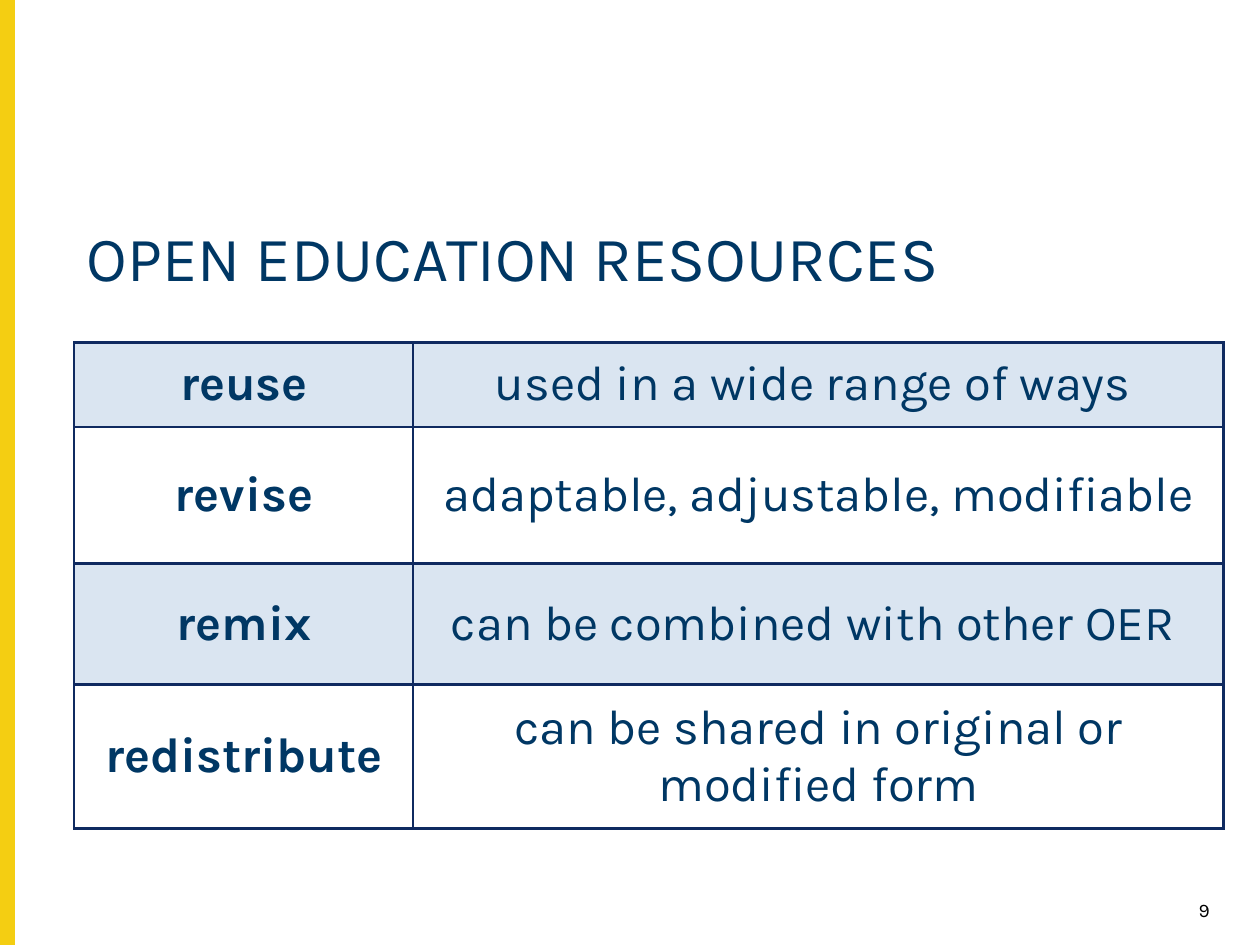
from lxml import etree
from pptx import Presentation
from pptx.dml.color import RGBColor
from pptx.enum import shapes, text
from pptx.oxml.ns import qn
from pptx.util import Pt

TITLE = "OPEN EDUCATION RESOURCES"
PAGE = "9"
ROWS = [  # term, meaning, row height
    ("reuse", "used in a wide range of ways ", 47.4),
    ("revise", "adaptable, adjustable, modifiable", 78.2),
    ("remix", "can be combined with other OER ", 69.2),
    ("redistribute", "can be shared in original or modified form", 82.2),
]
COL_WIDTHS = [193.7, 463]
LEFT, TABLE_TOP = 42.5, 195.8
FONT = "Karla"
COLORS = {"bar": "F4CE12", "text": "003764", "border": "0F2A60",
          "band": "DAE5F1", "page": "000000"}


def rgb(name):
    return RGBColor.from_string(COLORS[name])


def write(tf, content, size, color="text", align=text.PP_ALIGN.LEFT, bold=False):
    tf.text = content
    tf.word_wrap = True
    p = tf.paragraphs[0]
    p.alignment = align
    font = p.runs[0].font
    font.name, font.size, font.bold = FONT, Pt(size), bold
    font.color.rgb = rgb(color)


def add_text(s, box, inset, *args, **kwargs):
    tf = s.shapes.add_textbox(*map(Pt, box)).text_frame
    tf.margin_left = tf.margin_right = Pt(7.2)
    tf.margin_top = tf.margin_bottom = Pt(inset)
    tf.vertical_anchor = text.MSO_ANCHOR.MIDDLE
    write(tf, *args, **kwargs)


def add_borders(cell, width):
    tc_pr = cell._tc.get_or_add_tcPr()
    for i, side in enumerate(("lnL", "lnR", "lnT", "lnB")):
        ln = etree.Element(qn("a:" + side), w=str(Pt(width)))
        fill = etree.SubElement(ln, qn("a:solidFill"))
        etree.SubElement(fill, qn("a:srgbClr"), val=COLORS["border"])
        tc_pr.insert(i, ln)


prs = Presentation()
prs.slide_width, prs.slide_height = Pt(720), Pt(540)
s = prs.slides.add_slide(prs.slide_layouts[6])

# Yellow side bar
bar = s.shapes.add_shape(shapes.MSO_SHAPE.RECTANGLE, 0, 0, Pt(8), prs.slide_height)
bar.shadow.inherit = False
bar.fill.solid()
bar.fill.fore_color.rgb = bar.line.color.rgb = rgb("bar")
bar.line.width = Pt(1)

# Title
add_text(s, (LEFT, 115.2, sum(COL_WIDTHS), 62.6), 7.2, TITLE, 36)

# Table of terms, with every other row tinted
heights = [row[2] for row in ROWS]
table = s.shapes.add_table(len(ROWS), 2, Pt(LEFT), Pt(TABLE_TOP),
                           Pt(sum(COL_WIDTHS)), Pt(sum(heights))).table
table.first_row = table.horz_banding = False
for col, width in zip(table.columns, COL_WIDTHS):
    col.width = Pt(width)
for r, (term, meaning, height) in enumerate(ROWS):
    table.rows[r].height = Pt(height)
    for c, content in enumerate((term, meaning)):
        cell = table.cell(r, c)
        cell.margin_left = cell.margin_right = Pt(7.2)
        cell.margin_top = cell.margin_bottom = Pt(7.2)
        cell.vertical_anchor = text.MSO_ANCHOR.MIDDLE
        write(cell.text_frame, content, 28, align=text.PP_ALIGN.CENTER, bold=c == 0)
        if r % 2 == 0:
            cell.fill.solid()
            cell.fill.fore_color.rgb = rgb("band")
        else:
            cell.fill.background()
        add_borders(cell, 1.5)

# Page number
add_text(s, (661.7, 510.5, 36.7, 18.7), 3.6, PAGE, 11, "page", text.PP_ALIGN.RIGHT)

prs.save("out.pptx")
